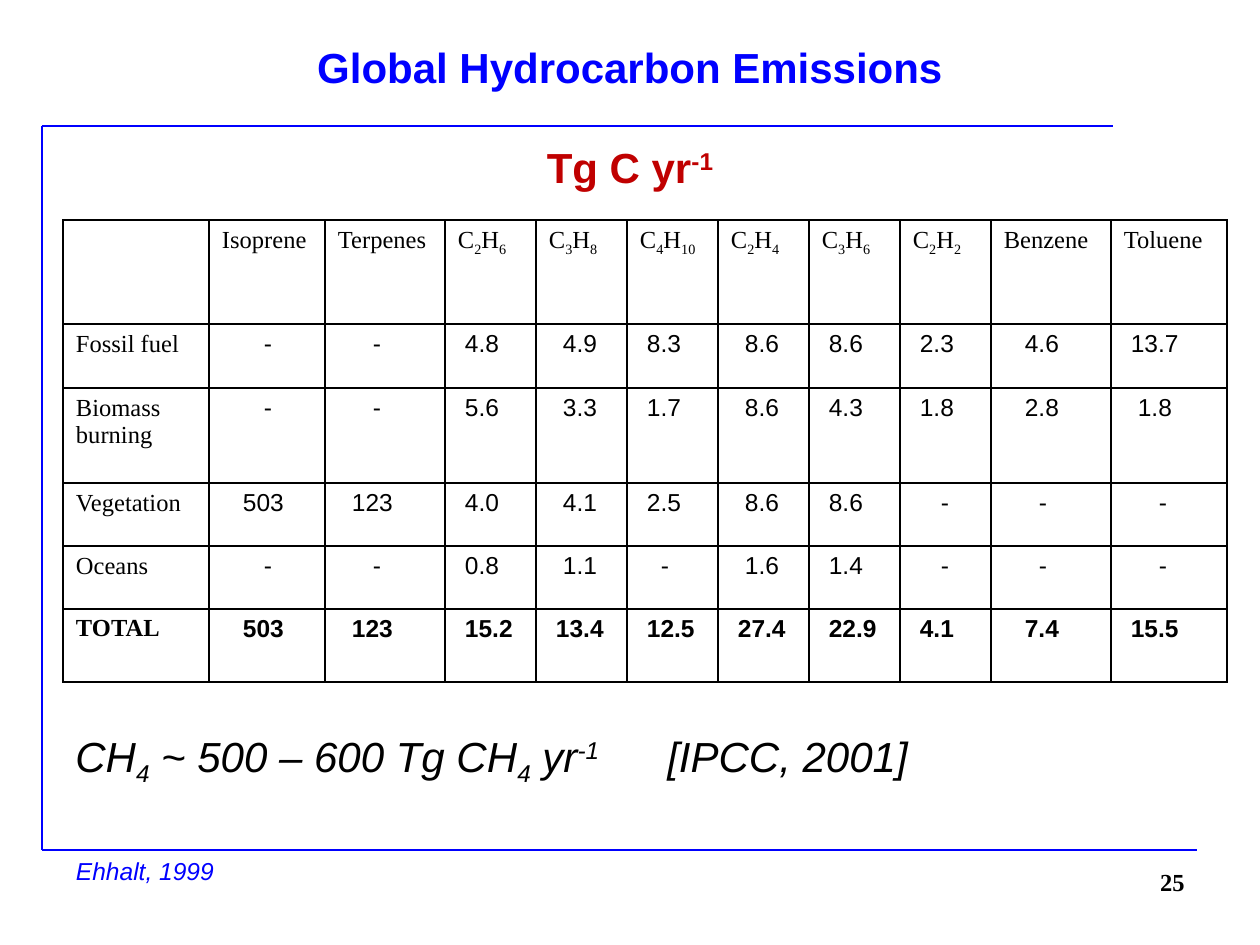
"""Build the slide on global hydrocarbon emissions."""
from lxml import etree
from pptx import Presentation
from pptx.dml.color import RGBColor
from pptx.enum.shapes import MSO_CONNECTOR
from pptx.enum.text import MSO_ANCHOR, PP_ALIGN
from pptx.oxml.ns import qn
from pptx.util import Pt

PX = 914400 // 126
LINE = MSO_CONNECTOR.STRAIGHT
TOP, MID = MSO_ANCHOR.TOP, MSO_ANCHOR.MIDDLE
LEFT, MIDDLE, RIGHT = PP_ALIGN.LEFT, PP_ALIGN.CENTER, PP_ALIGN.RIGHT
INK = {"blue": "0000FF", "red": "C00000", "black": "000000"}
SANS, SERIF = "Arial", "Times New Roman"
SUB, SUP = -25000, 30000
INSET, SPACE = 13, 7

COLS = [146, 116, 120] + [91] * 6 + [120, 116]
ROWS = [104, 64, 95, 63, 63, 73]
HEADS = ["", "Isoprene", "Terpenes", "C2H6", "C3H8", "C4H10",
         "C2H4", "C3H6", "C2H2", "Benzene", "Toluene"]
DATA = [
    ("Fossil fuel", "- - 4.8 4.9 8.3 8.6 8.6 2.3 4.6 13.7"),
    ("Biomass burning", "- - 5.6 3.3 1.7 8.6 4.3 1.8 2.8 1.8"),
    ("Vegetation", "503 123 4.0 4.1 2.5 8.6 8.6 - - -"),
    ("Oceans", "- - 0.8 1.1 - 1.6 1.4 - - -"),
    ("TOTAL", "503 123 15.2 13.4 12.5 27.4 22.9 4.1 7.4 15.5"),
]
NUM_PAD = [3, 2, 1, 2, 1, 2, 1, 1, 3, 2]
DASH_PAD = [6, 5, 3, 3, 3, 3, 3, 4, 5, 5]


def split(name):
    """Split a formula into runs with its digits lowered."""
    runs = []
    for c in name:
        base = SUB if c.isdigit() else 0
        if runs and runs[-1][1] == base:
            runs[-1] = (runs[-1][0] + c, base)
        else:
            runs.append((c, base))
    return runs


class Deck:
    """Hold the style and the current slide."""

    def __init__(self):
        """Open a blank slide."""
        self.prs = Presentation()
        self.prs.slide_width, self.prs.slide_height = 1260 * PX, 945 * PX
        self.slide = self.prs.slides.add_slide(self.prs.slide_layouts[6])

    def rule(self, *ends):
        """Draw a blue line."""
        line = self.slide.shapes.add_connector(LINE, *(v * PX for v in ends))
        line.line.color.rgb = RGBColor.from_string(INK["blue"])
        line.line.width = Pt(1.5)
        etree.SubElement(line._element.spPr, qn("a:effectLst"))

    def words(self, para, runs, size=14, face=SANS, ink="black", bold=False, slant=False):
        """Add text run by run."""
        for text, base in runs:
            run = para.add_run()
            run.text = text
            font = run.font
            font.size, font.name, font.bold, font.italic = Pt(size), face, bold, slant
            font.color.rgb = RGBColor.from_string(INK[ink])
            if base:
                run._r.get_or_add_rPr().set("baseline", str(base))

    def text(self, box, lines, align=LEFT, anchor=TOP, gap=0, tab=0, wrap=True):
        """Add a text box with one styled paragraph per line."""
        frame = self.slide.shapes.add_textbox(*(v * PX for v in box)).text_frame
        frame.word_wrap, frame.vertical_anchor = wrap, anchor
        for i, (runs, style) in enumerate(lines):
            para = frame.add_paragraph() if i else frame.paragraphs[0]
            para.alignment = align
            if i:
                para.space_before = Pt(gap)
            if tab:
                stops = etree.SubElement(para._p.get_or_add_pPr(), qn("a:tabLst"))
                etree.SubElement(stops, qn("a:tab"), pos=str(tab * PX), algn="l")
            self.words(para, runs, **style)

    def cell(self, cell, runs, pad=0, **style):
        """Fill one table cell and frame it in black."""
        cell.margin_left = (INSET + pad * SPACE) * PX
        cell.margin_right = 0 if pad else INSET * PX
        self.words(cell.text_frame.paragraphs[0], runs, **style)
        props = cell._tc.get_or_add_tcPr()
        for side in ("lnL", "lnR", "lnT", "lnB"):
            edge = etree.SubElement(props, qn("a:" + side), w=str(Pt(1)))
            fill = etree.SubElement(edge, qn("a:solidFill"))
            etree.SubElement(fill, qn("a:srgbClr"), val=INK["black"])
        cell.fill.background()

    def table(self, left, top):
        """Add the table of emissions."""
        box = (left, top, sum(COLS), sum(ROWS))
        grid = self.slide.shapes.add_table(
            len(ROWS), len(COLS), *(v * PX for v in box)).table
        grid.first_row = grid.horz_banding = False
        for col, width in zip(grid.columns, COLS):
            col.width = width * PX
        for row, height in zip(grid.rows, ROWS):
            row.height = height * PX
        for c, head in enumerate(HEADS):
            self.cell(grid.cell(0, c), split(head), face=SERIF)
        for r, (name, values) in enumerate(DATA, 1):
            bold = name == "TOTAL"
            self.cell(grid.cell(r, 0), [(name, 0)], face=SERIF, bold=bold)
            for c, value in enumerate(values.split()):
                pad = DASH_PAD[c] if value == "-" else NUM_PAD[c]
                if len(value) == 4:
                    pad = 1
                self.cell(grid.cell(r, c + 1), [(value, 0)], pad, bold=bold)


def main():
    """Draw the slide and save it."""
    deck = Deck()
    deck.rule(42, 126, 1113, 126)
    deck.rule(42, 850, 1197, 850)
    deck.rule(42, 126, 42, 850)
    head = {"size": 24, "bold": True}
    deck.text((63, 38, 1134, 157), [
        ([("Global Hydrocarbon Emissions", 0)], {**head, "ink": "blue"}),
        ([("Tg C yr", 0), ("-1", SUP)], {**head, "ink": "red"}),
    ], MIDDLE, MID, gap=28)
    deck.table(63, 220)
    deck.text((903, 861, 294, 66),
              [([("25", 0)], {"face": SERIF, "bold": True})], RIGHT)
    deck.text((63, 850, 164, 43),
              [([("Ehhalt, 1999", 0)], {"ink": "blue", "slant": True})],
              MIDDLE, wrap=False)
    deck.text((63, 724, 883, 64), [
        ([("CH", 0), ("4", SUB), (" ~ 500 – 600 Tg CH", 0), ("4", SUB),
          (" yr", 0), ("-1", SUP), ("\t[IPCC, 2001]", 0)],
         {"size": 24, "slant": True})], tab=592)
    deck.prs.save("out.pptx")


if __name__ == "__main__":
    main()
